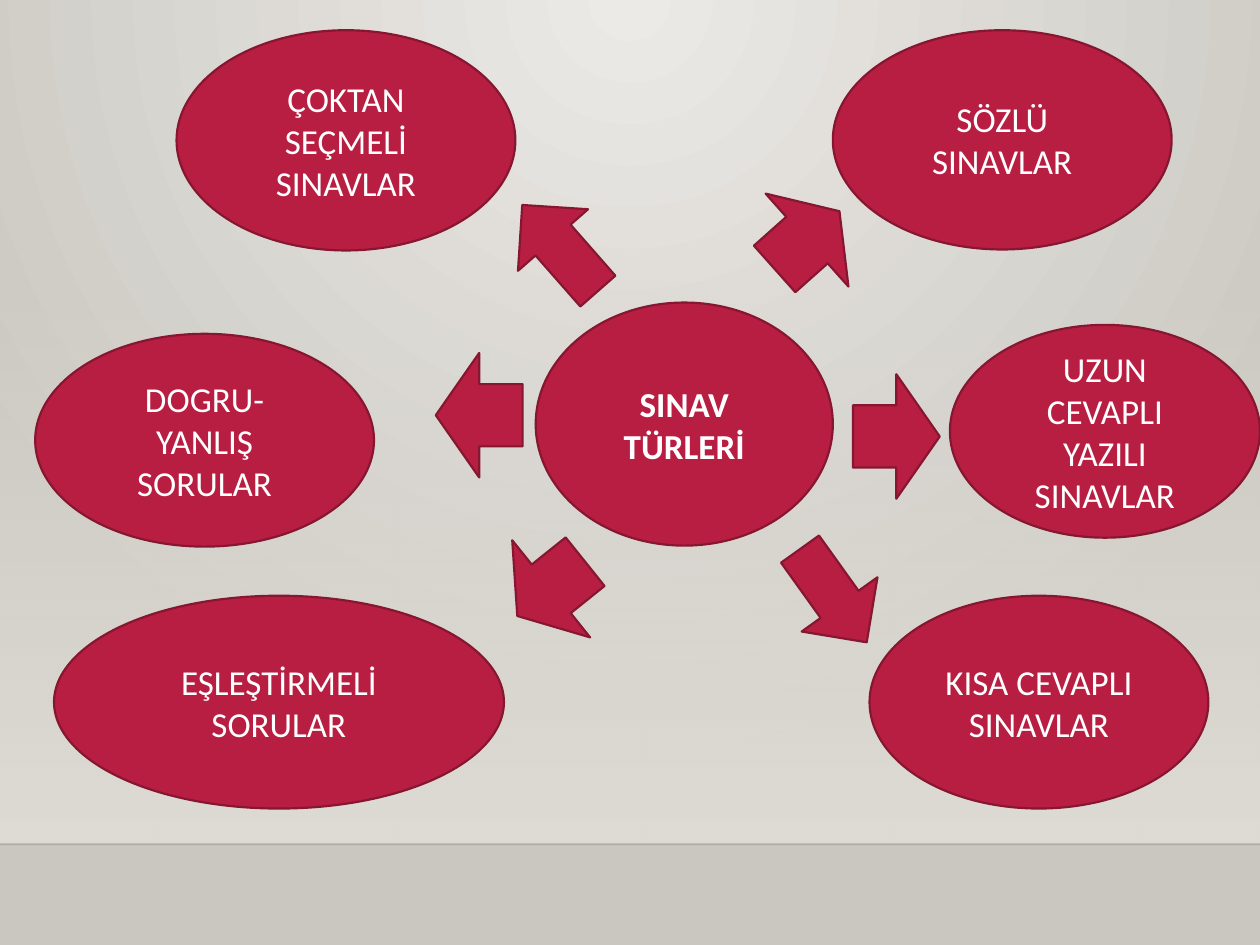
from lxml.etree import SubElement
from pptx import Presentation
from pptx.dml.color import RGBColor
from pptx.enum.shapes import MSO_CONNECTOR, MSO_SHAPE
from pptx.enum.text import MSO_ANCHOR, PP_ALIGN
from pptx.oxml.ns import qn
from pptx.util import Cm, Pt

COLORS = {
    "glow": "ECEAE7",
    "backdrop": "CAC7C1",
    "wall": "DFDBD5",
    "floor_line": "000001",
    "crimson": "B71E42",
    "outline": "871631",
    "text": "FFFFFF",
}
WIDTH, HEIGHT = 25.4, 19.05
WALL_TOP, FLOOR = 5.61, 17.02

TOPIC = ("SINAV TÜRLERİ", 10.8, 6.1, 5.99, 4.9)
EXAM_TYPES = [
    ("ÇOKTAN SEÇMELİ SINAVLAR", 3.56, 0.61, 6.83, 4.44),
    ("SÖZLÜ SINAVLAR", 16.79, 0.61, 6.83, 4.42),
    ("UZUN CEVAPLI YAZILI SINAVLAR", 19.15, 6.55, 6.25, 4.29),
    ("KISA CEVAPLI SINAVLAR", 17.53, 12.01, 6.83, 4.29),
    ("EŞLEŞTİRMELİ SORULAR", 1.09, 12.01, 9.07, 4.29),
    ("DOGRU- YANLIŞ\nSORULAR", 0.71, 6.73, 6.83, 4.29),
]
WIDE_ARROW, LONG_ARROW = (1.75, 2.51), (2.31, 1.88)
ARROWS = [
    (16.27, 4.84, WIDE_ARROW, 318.3),
    (11.29, 5.0, LONG_ARROW, 228.7),
    (9.66, 8.37, WIDE_ARROW, 180),
    (11.11, 11.87, WIDE_ARROW, 141.3),
    (16.8, 12.01, LONG_ARROW, 54.4),
    (18.07, 8.8, WIDE_ARROW, 0),
]


def color(name):
    return RGBColor.from_string(COLORS[name])


def set_gradient(fill, *names):
    fill.gradient()
    for stop, name in zip(fill.gradient_stops, names):
        stop.color.rgb = color(name)


def set_alpha(element, percent):
    rgb = next(element.iter(qn("a:srgbClr")))
    SubElement(rgb, qn("a:alpha"), val=str(percent * 1000))


def add_shape(slide, kind, left, top, width, height):
    shape = slide.shapes.add_shape(kind, Cm(left), Cm(top), Cm(width), Cm(height))
    shape.shadow.inherit = False
    shape.fill.solid()
    shape.fill.fore_color.rgb = color("crimson")
    shape.line.color.rgb = color("outline")
    shape.line.width = Pt(1.25)
    return shape


def add_ellipse(slide, text, left, top, width, height, bold=False):
    shape = add_shape(slide, MSO_SHAPE.OVAL, left, top, width, height)
    frame = shape.text_frame
    frame.word_wrap = True
    frame.vertical_anchor = MSO_ANCHOR.MIDDLE
    frame.text = text
    for paragraph in frame.paragraphs:
        paragraph.alignment = PP_ALIGN.CENTER
        paragraph.font.name = "Calibri"
        paragraph.font.size = Pt(20)
        paragraph.font.bold = bold
        paragraph.font.color.rgb = color("text")


def add_backdrop(slide):
    set_gradient(slide.background.fill, "glow", "backdrop")
    gradient = next(slide.element.iter(qn("a:gradFill")))
    gradient.remove(gradient.find(qn("a:lin")))
    radial = SubElement(gradient, qn("a:path"), {"path": "circle"})
    SubElement(radial, qn("a:fillToRect"), l="43000", t="0", r="43000", b="100000")

    wall = add_shape(slide, MSO_SHAPE.RECTANGLE, 0, WALL_TOP, WIDTH, FLOOR - WALL_TOP)
    set_gradient(wall.fill, "wall", "wall")
    wall.fill.gradient_angle = 270
    set_alpha(next(wall.element.iter(qn("a:gs"))), 0)
    wall.line.fill.background()

    line = slide.shapes.add_connector(
        MSO_CONNECTOR.STRAIGHT, 0, Cm(FLOOR), Cm(WIDTH), Cm(FLOOR)
    )
    line.line.color.rgb = color("floor_line")
    line.line.width = Pt(1)
    set_alpha(line.line._ln, 20)
    SubElement(line.element.spPr, qn("a:effectLst"))


def main():
    presentation = Presentation()
    presentation.slide_width, presentation.slide_height = Cm(WIDTH), Cm(HEIGHT)
    slide = presentation.slides.add_slide(presentation.slide_layouts[6])
    add_backdrop(slide)
    add_ellipse(slide, *TOPIC, bold=True)
    for exam_type in EXAM_TYPES:
        add_ellipse(slide, *exam_type)
    for center_x, center_y, (width, height), angle in ARROWS:
        arrow = add_shape(
            slide, MSO_SHAPE.RIGHT_ARROW,
            center_x - width / 2, center_y - height / 2, width, height,
        )
        arrow.rotation = angle
    presentation.save("out.pptx")


if __name__ == "__main__":
    main()
